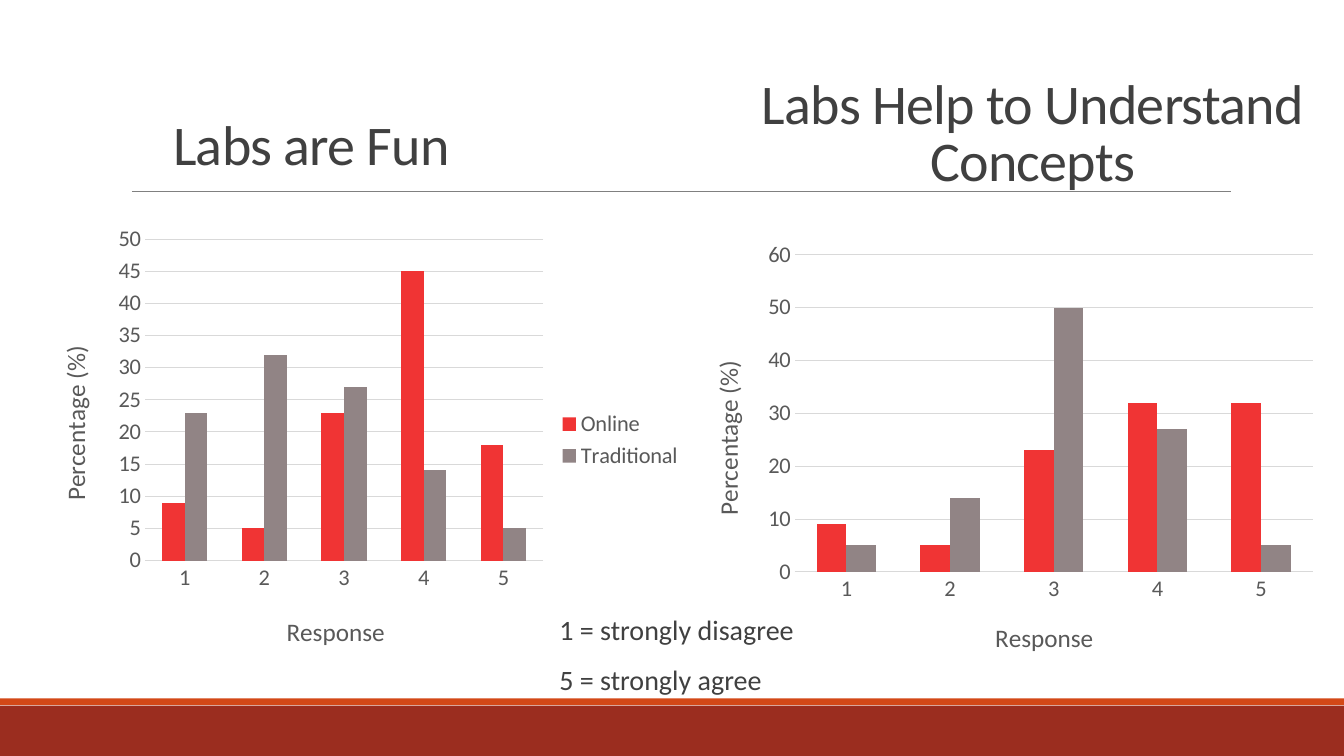
from dataclasses import dataclass
from lxml.etree import SubElement
from pptx import Presentation
from pptx.chart.data import CategoryChartData
from pptx.dml.color import RGBColor
from pptx.enum.chart import XL_CHART_TYPE, XL_LEGEND_POSITION, XL_TICK_MARK
from pptx.enum.shapes import MSO_CONNECTOR, MSO_SHAPE
from pptx.enum.text import MSO_ANCHOR, PP_ALIGN
from pptx.oxml.ns import qn
from pptx.util import Inches, Pt


@dataclass
class Theme:
    font: str = "Calibri"
    ink: RGBColor = RGBColor.from_string("404040")
    soft: RGBColor = RGBColor.from_string("595959")
    grid: RGBColor = RGBColor.from_string("D9D9D9")
    rule: RGBColor = RGBColor.from_string("808080")
    brick: RGBColor = RGBColor.from_string("9B2D1F")
    flame: RGBColor = RGBColor.from_string("D34817")
    red: RGBColor = RGBColor.from_string("F03434")
    taupe: RGBColor = RGBColor.from_string("918485")
    head: int = 40
    note: int = 20
    name: int = 18
    tick: int = 16


look = Theme()
deck = Presentation()
deck.slide_width, deck.slide_height = Inches(13.333), Inches(7.5)
slide = deck.slides.add_slide(deck.slide_layouts[6])
shapes = slide.shapes


def place(x, y, wide, high):
    """Turn percent of the slide's size into lengths."""
    w, h = deck.slide_width / 100, deck.slide_height / 100
    return int(x * w), int(y * h), int(wide * w), int(high * h)


def write(text, spot, size, align=PP_ALIGN.LEFT, anchor=MSO_ANCHOR.TOP,
          lead=1.0, before=0, after=0, track=0):
    """Add a text box; each line of text becomes a paragraph."""
    frame = shapes.add_textbox(*place(*spot)).text_frame
    frame.word_wrap = True
    frame.vertical_anchor = anchor
    frame.text = text
    for para in frame.paragraphs:
        para.alignment, para.line_spacing = align, lead
        para.space_before, para.space_after = Pt(before), Pt(after)
        for run in para.runs:
            font = run.font
            font.name, font.size = look.font, Pt(size)
            font.color.rgb = look.ink
            if track:
                font._element.set("spc", str(track))


# Footer bands and the rule under the headings
for top, high, color in ((93.33, 6.67, look.brick), (92.4, 0.87, look.flame)):
    band = shapes.add_shape(MSO_SHAPE.RECTANGLE, *place(0, top, 100, high))
    band.shadow.inherit = False
    band.fill.solid()
    band.fill.fore_color.rgb = color
    band.line.fill.background()

left, level, right, _ = place(9.82, 25.33, 91.58, 0)
rule = shapes.add_connector(MSO_CONNECTOR.STRAIGHT, left, level, right, level)
rule.line.color.rgb, rule.line.width = look.rule, Pt(0.5)
SubElement(rule._element.spPr, qn("a:effectLst"))

write("1 = strongly disagree\n5 = strongly agree", (40.88, 80.93, 20.03, 13.6),
      look.note, lead=0.9, before=12, after=2)

# Charts: place, top of scale, step, series, then plot and title places
# as shares of the chart
charts = (
    ((3, 28.67, 48.6, 59.07), 50, 5,
     (("Online", (9, 5, 23, 45, 18)), ("Traditional", (23, 32, 27, 14, 5))),
     (0.16, 0.05, 0.61, 0.72), (0.37, 0.88), (0.02, 0.28), True),
    ((51.6, 30.8, 47.03, 58.27), 60, 10,
     (("Series 1", (9, 5, 23, 32, 32)), ("Series 2", (5, 14, 50, 27, 5))),
     (0.16, 0.05, 0.82, 0.72), (0.47, 0.87), (0.02, 0.28), False),
)
for spot, peak, step, rows, plot, below, beside, key in charts:
    data = CategoryChartData()
    data.categories = ["1", "2", "3", "4", "5"]
    for name, vals in rows:
        data.add_series(name, vals)
    chart = shapes.add_chart(
        XL_CHART_TYPE.COLUMN_CLUSTERED, *place(*spot), data).chart
    chart.has_title = False
    chart.font.name, chart.font.size = look.font, Pt(look.tick)
    chart.font.color.rgb = look.soft
    chart.has_legend = key
    if key:
        chart.legend.position = XL_LEGEND_POSITION.RIGHT
        chart.legend.include_in_layout = False

    bars = chart.plots[0]
    bars.gap_width, bars.overlap, bars.vary_by_categories = 150, 0, False
    for row, color in zip(bars.series, (look.red, look.taupe)):
        row.format.fill.solid()
        row.format.fill.fore_color.rgb = color

    cats, scale = chart.category_axis, chart.value_axis
    scale.minimum_scale, scale.maximum_scale, scale.major_unit = 0, peak, step
    cats.format.line.color.rgb, cats.format.line.width = look.grid, Pt(0.75)
    scale.format.line.fill.background()
    lines = scale.major_gridlines.format.line
    lines.color.rgb, lines.width = look.grid, Pt(0.75)

    area = chart._chartSpace.find(".//" + qn("c:plotArea"))
    parts = [(area, 0, plot)]
    for axis, label, corner in ((cats, "Response", below),
                                (scale, "Percentage (%)", beside)):
        axis.major_tick_mark = axis.minor_tick_mark = XL_TICK_MARK.NONE
        frame = axis.axis_title.text_frame
        frame.text = label
        font = frame.paragraphs[0].runs[0].font
        font.name, font.size, font.bold = look.font, Pt(look.name), False
        font.color.rgb = look.soft
        parts.append((axis.axis_title._element, 1, corner))
    turn = frame._txBody.find(qn("a:bodyPr"))
    turn.set("rot", "-5400000")
    turn.set("vert", "horz")

    for node, index, shares in parts:
        for old in node.findall(qn("c:layout")):
            node.remove(old)
        layout = SubElement(node, qn("c:layout"))
        node.insert(index, layout)
        manual = SubElement(layout, qn("c:manualLayout"))
        if node is area:
            SubElement(manual, qn("c:layoutTarget")).set("val", "inner")
        for side in "xy":
            SubElement(manual, qn(f"c:{side}Mode")).set("val", "edge")
        for side, share in zip("xywh", shares):
            SubElement(manual, qn(f"c:{side}")).set("val", str(share))

for text, spot, align in (
        ("Labs Help to Understand Concepts", (53.7, 4.93, 46.27, 21.2),
         PP_ALIGN.CENTER),
        ("Labs are Fun", (12.15, 2.8, 29.7, 21.2), PP_ALIGN.LEFT)):
    write(text, spot, look.head, align=align, anchor=MSO_ANCHOR.BOTTOM,
          lead=0.85, track=-50)

deck.save("out.pptx")
